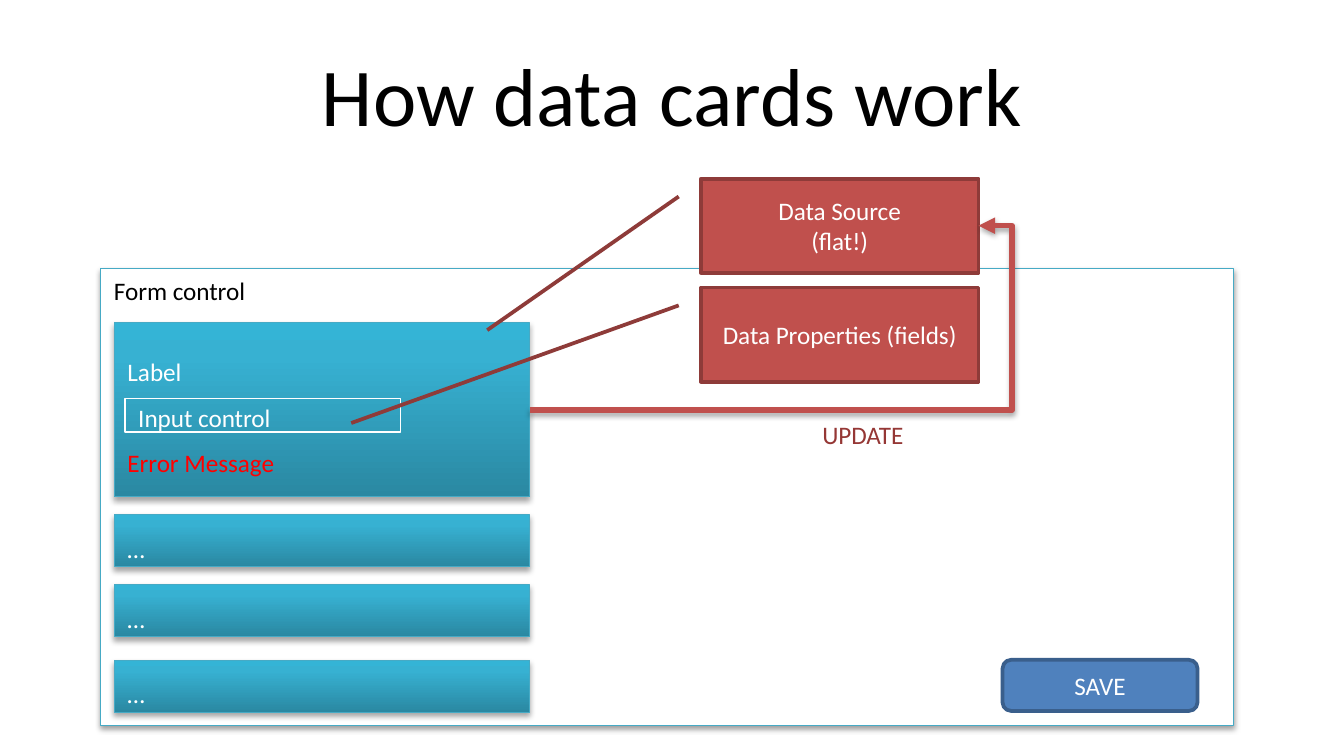
from copy import deepcopy
from lxml.etree import SubElement
from pptx import Presentation
from pptx.dml.color import RGBColor
from pptx.enum.shapes import MSO_CONNECTOR, MSO_SHAPE
from pptx.enum.text import MSO_ANCHOR, MSO_AUTO_SIZE, PP_ALIGN
from pptx.oxml.ns import qn
from pptx.util import Inches, Pt

FONT = "Calibri"
WHITE, BLACK, ERROR = "FFFFFF", "000000", "FF0000"
TEAL, RED, DARK_RED, UPDATE_RED = "46AAC5", "C0504D", "8E3B39", "953735"
BLUE, DARK_BLUE = "4F81BD", "3A5F8C"
CARD_STOPS = [(0, "2A88A2"), (0.8, "37B1D2"), (1, "34B4D6")]
CARD_LEFT, CARD_WIDTH = 8.5, 30.9


def rgb(value):
    return RGBColor.from_string(value)


def grid(*cells):
    return [Inches(cell / 10) for cell in cells]


def add_shadow(s, alpha=35, dist=1.8):
    spPr = s._element.spPr
    effects = spPr.find(qn("a:effectLst"))
    if effects is None:
        effects = SubElement(spPr, qn("a:effectLst"))
    shadow = SubElement(effects, qn("a:outerShdw"), blurRad=str(Pt(3.1)),
                        dist=str(Pt(dist)), dir="5400000", rotWithShape="0")
    color = SubElement(shadow, qn("a:srgbClr"), val=BLACK)
    SubElement(color, qn("a:alpha"), val=str(alpha * 1000))


def add_box(slide, kind, box, fill, line, width):
    s = slide.shapes.add_shape(kind, *grid(*box))
    s.shadow.inherit = False
    if fill:
        s.fill.solid()
        s.fill.fore_color.rgb = rgb(fill)
    else:
        s.fill.background()
    s.line.color.rgb = rgb(line)
    s.line.width = Pt(width)
    return s


def write(s, paragraphs, color=WHITE, size=13.5, align=PP_ALIGN.CENTER,
          anchor=MSO_ANCHOR.MIDDLE, spacing=None, wrap=True):
    tf = s.text_frame
    tf.word_wrap = wrap
    tf.vertical_anchor = anchor
    for i, lines in enumerate(paragraphs):
        p = tf.add_paragraph() if i else tf.paragraphs[0]
        p.alignment = align
        if spacing:
            p.line_spacing = spacing
        for j, line in enumerate(lines):
            if j:
                p.add_line_break()
            r = p.add_run()
            r.text = line
            r.font.name = FONT
            r.font.size = Pt(size)
            r.font.color.rgb = rgb(color)
    return tf


def add_label(slide, box, content, **style):
    s = slide.shapes.add_textbox(*grid(*box))
    return write(s, [[content]], **style)


def add_card(slide, top, height, paragraphs):
    s = add_box(slide, MSO_SHAPE.RECTANGLE,
                (CARD_LEFT, top, CARD_WIDTH, height), None, TEAL, 0.75)
    s.fill.gradient()
    s.fill.gradient_angle = 90
    stops = s._element.spPr.find(".//" + qn("a:gsLst"))
    stops.append(deepcopy(stops[-1]))
    for stop, (position, color) in zip(s.fill.gradient_stops, CARD_STOPS):
        stop.position = position
        stop.color.rgb = rgb(color)
    add_shadow(s)
    return write(s, paragraphs, align=PP_ALIGN.LEFT, spacing=1.5)


def add_callout(slide, top, lines, tip):
    s = add_box(slide, MSO_SHAPE.LINE_CALLOUT_1, (52.15, top, 20.65, 7),
                RED, DARK_RED, 2)
    for i, value in enumerate((0.19, -0.08, *tip)):
        s.adjustments[i] = value
    write(s, [lines])


def add_update_arrow(slide, start, end, bend_percent):
    s = slide.shapes.add_connector(MSO_CONNECTOR.ELBOW, *grid(*start, *end))
    s.line.color.rgb = rgb(RED)
    s.line.width = Pt(3)
    spPr = s._element.spPr
    SubElement(spPr.find(qn("a:ln")), qn("a:tailEnd"), type="triangle")
    SubElement(spPr.find(".//" + qn("a:avLst")), qn("a:gd"), name="adj1",
               fmla=f"val {round(bend_percent * 1000)}")
    add_shadow(s)


def add_form(slide):
    s = add_box(slide, MSO_SHAPE.RECTANGLE, (7.5, 20, 84.3, 34), WHITE, TEAL, 0.75)
    add_shadow(s, 38, 1.6)
    write(s, [["Form control"]], color=BLACK, align=PP_ALIGN.LEFT,
          anchor=MSO_ANCHOR.TOP)
    tf = add_card(slide, 24, 12.95, [["Label"], ["Input control"], ["Error Message"]])
    tf.paragraphs[1]._p.get_or_add_pPr().set("marL", str(Inches(0.08)))
    tf.paragraphs[2].runs[0].font.color.rgb = rgb(ERROR)
    add_box(slide, MSO_SHAPE.RECTANGLE, (9.3, 29.65, 20.5, 2.5), None, WHITE, 1)
    for top in (38.3, 43.5, 49.15):
        add_card(slide, top, 3.85, [["…"]])


def main():
    prs = Presentation()
    prs.slide_width, prs.slide_height = grid(100, 56.25)
    slide = prs.slides.add_slide(prs.slide_layouts[6])
    add_label(slide, (5, 2.3, 90, 9.4), "How data cards work", color=BLACK, size=44)
    add_form(slide)
    add_callout(slide, 13.3, ["Data Source", "(flat!)"], (1.61, -0.77))
    add_callout(slide, 21.4, ["Data Properties (fields)"], (1.44, -1.26))
    save = add_box(slide, MSO_SHAPE.ROUNDED_RECTANGLE, (74.6, 49.1, 14.5, 3.8),
                   BLUE, DARK_BLUE, 2)
    write(save, [["SAVE"]])
    add_update_arrow(slide, (CARD_LEFT + CARD_WIDTH, 30.5), (72.8, 16.8), 107.5)
    tf = add_label(slide, (60.2, 30.7, 8.1, 3.3), "UPDATE", color=UPDATE_RED,
                   align=PP_ALIGN.LEFT, anchor=MSO_ANCHOR.TOP, wrap=False)
    tf.auto_size = MSO_AUTO_SIZE.SHAPE_TO_FIT_TEXT
    prs.save("out.pptx")


if __name__ == "__main__":
    main()
